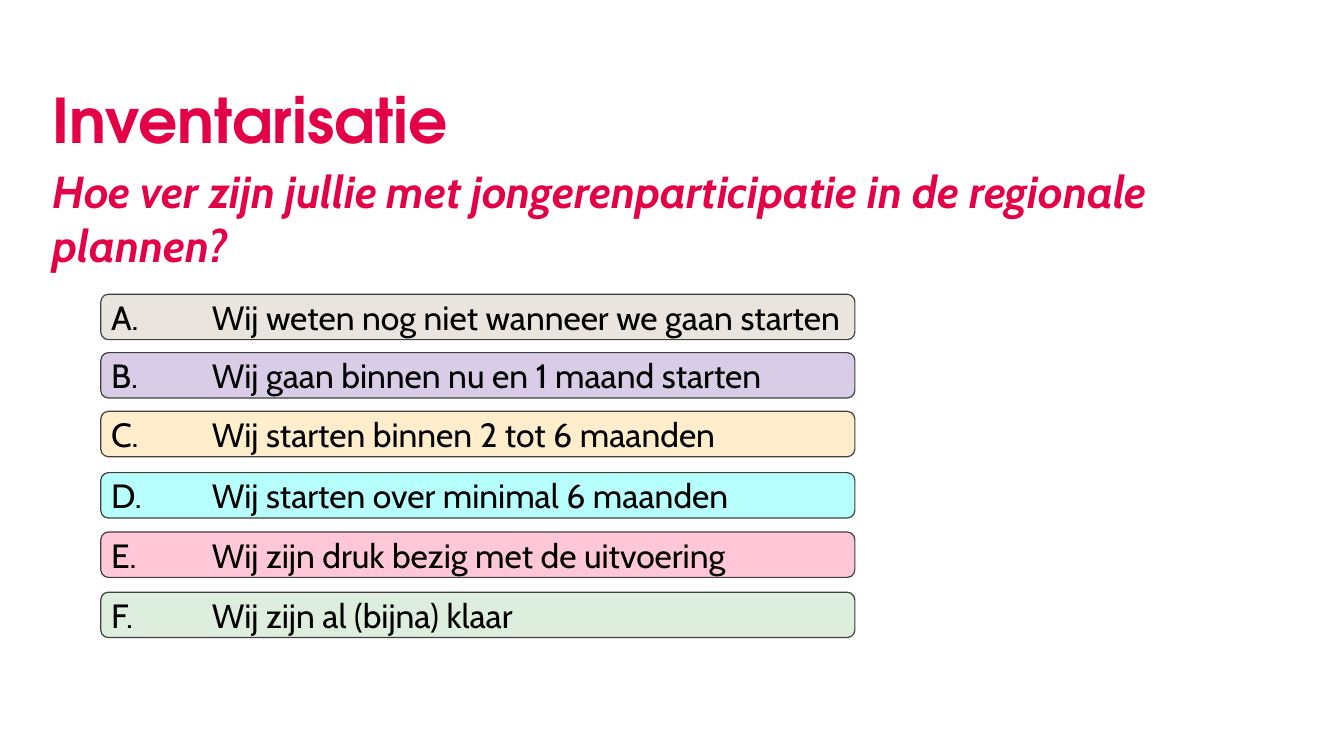
from lxml import etree
from pptx import Presentation
from pptx.dml.color import RGBColor
from pptx.enum.shapes import MSO_SHAPE
from pptx.enum.text import MSO_ANCHOR, MSO_AUTO_SIZE, PP_ALIGN
from pptx.oxml.ns import qn
from pptx.util import Pt

ROUND = MSO_SHAPE.ROUNDED_RECTANGLE
TOP, MIDDLE = MSO_ANCHOR.TOP, MSO_ANCHOR.MIDDLE
LEFT = PP_ALIGN.LEFT
FIXED = MSO_AUTO_SIZE.NONE

COLORS = {
    "red": "E40046",
    "black": "000000",
    "edge": "404040",
    "sand": "EAE4DE",
    "lilac": "D8CCE6",
    "cream": "FFEDCC",
    "aqua": "B7FFFC",
    "pink": "FFC7D8",
    "mint": "DEEEDE",
}

ANSWERS = [
    ("A.", "Wij weten nog niet wanneer we gaan starten", "sand", 210.2),
    ("B.", "Wij gaan binnen nu en 1 maand starten", "lilac", 251.9),
    ("C.", "Wij starten binnen 2 tot 6 maanden", "cream", 293.8),
    ("D.", "Wij starten over minimal 6 maanden", "aqua", 337.6),
    ("E.", "Wij zijn druk bezig met de uitvoering", "pink", 380),
    ("F.", "Wij zijn al (bijna) klaar", "mint", 423),
]


def color(name):
    return RGBColor.from_string(COLORS[name])


def write(shape, text, size, font, tint, bold=False, italic=False,
          anchor=TOP, inset=0, spacing=None, tab=None):
    frame = shape.text_frame
    frame.word_wrap = True
    frame.auto_size = FIXED
    frame.vertical_anchor = anchor
    frame.margin_left = frame.margin_right = Pt(inset)
    frame.margin_top = frame.margin_bottom = Pt(inset)
    frame.text = text
    line = frame.paragraphs[0]
    line.alignment = LEFT
    if spacing:
        line.line_spacing = spacing
    if tab:
        stops = etree.SubElement(line._p.get_or_add_pPr(), qn("a:tabLst"))
        etree.SubElement(stops, qn("a:tab"), pos=str(Pt(tab)), algn="l")
    style = line.runs[0].font
    style.name = font
    style.size = Pt(size)
    style.bold = bold
    style.italic = italic
    style.color.rgb = color(tint)


class Deck:
    head = "TeX Gyre Adventor"
    body = "Cabin"

    def __init__(self, width, height):
        self.file = Presentation()
        self.file.slide_width = Pt(width)
        self.file.slide_height = Pt(height)
        self.slide = self.file.slides.add_slide(self.file.slide_layouts[5])

    def title(self, text, left, top, width, height):
        shape = self.slide.shapes.title
        shape.left, shape.top = Pt(left), Pt(top)
        shape.width, shape.height = Pt(width), Pt(height)
        write(shape, text, 44, self.head, "red", bold=True, spacing=0.9)

    def question(self, text, left, top, width, height):
        box = self.slide.shapes.add_textbox(
            Pt(left), Pt(top), Pt(width), Pt(height))
        write(box, text, 32, self.body, "red", bold=True, italic=True)

    def bar(self, text, fill, left, top, width, height):
        shape = self.slide.shapes.add_shape(
            ROUND, Pt(left), Pt(top), Pt(width), Pt(height))
        shape.shadow.inherit = False
        shape.fill.solid()
        shape.fill.fore_color.rgb = color(fill)
        shape.line.color.rgb = color("edge")
        shape.line.width = Pt(0.85)
        write(shape, text, 24, self.body, "black", anchor=MIDDLE,
              inset=5.76, tab=72)


def main():
    deck = Deck(960, 540)
    deck.title("Inventarisatie", 37.5, 64.5, 862, 51)
    deck.question(
        "Hoe ver zijn jullie met jongerenparticipatie in de regionale plannen?",
        37.5, 117, 909.4, 118)
    for letter, answer, fill, top in ANSWERS:
        deck.bar(f"{letter}\t{answer}", fill, 72, top, 538.6, 32.4)
    deck.file.save("out.pptx")


if __name__ == "__main__":
    main()
